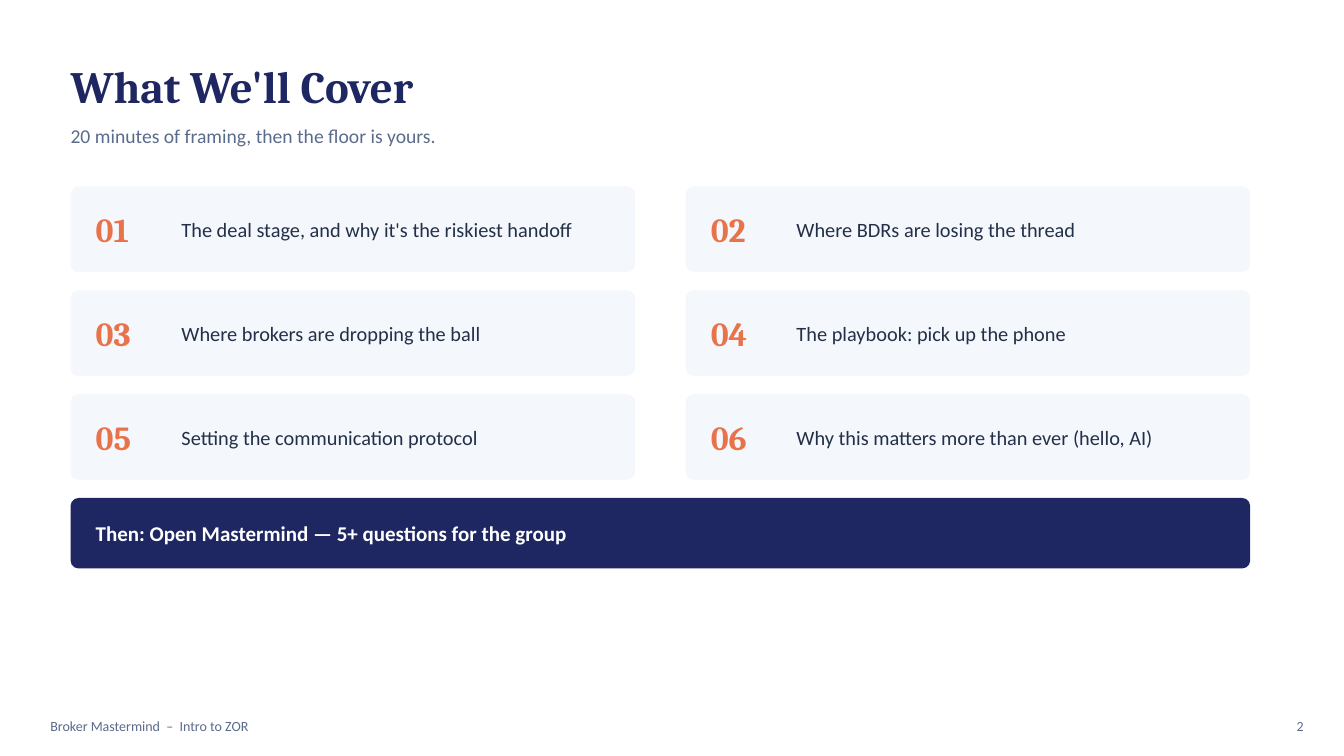
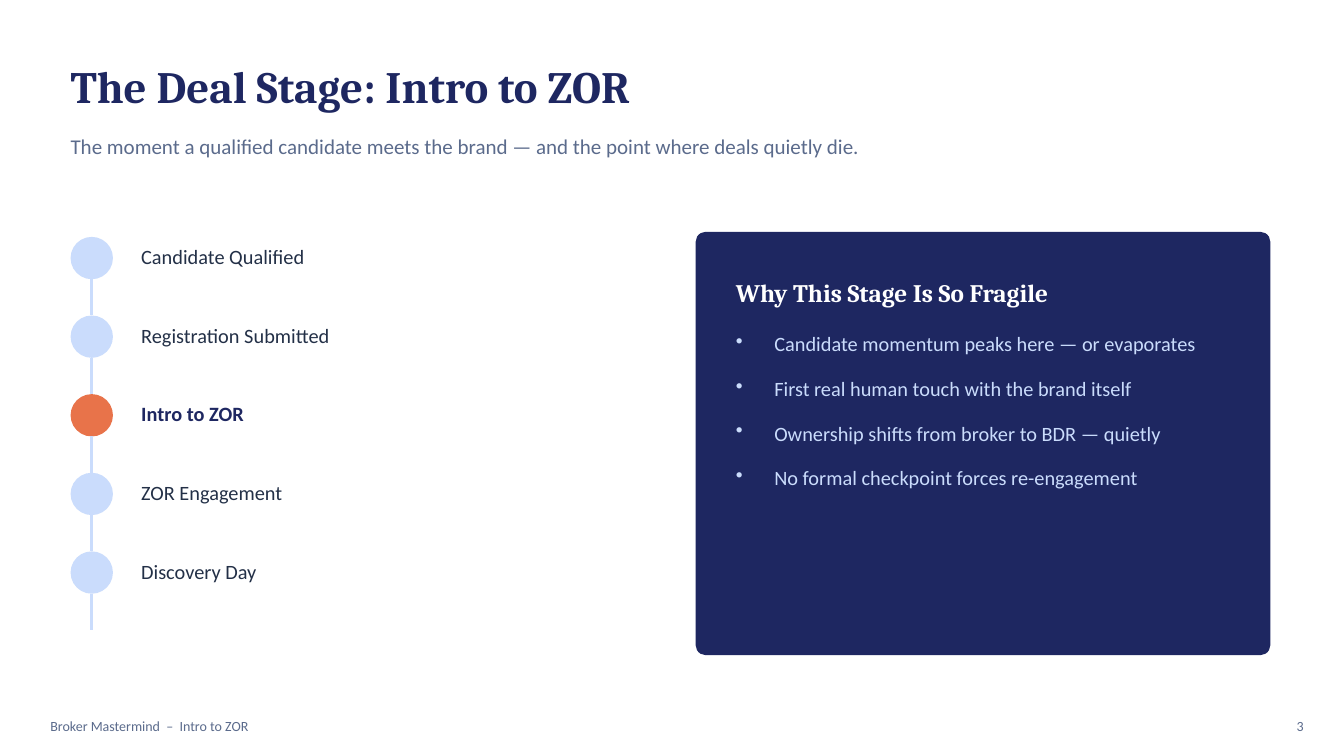
from dataclasses import dataclass
from typing import NamedTuple

import lxml.etree
import pptx
import pptx.dml.color
import pptx.enum.shapes
import pptx.enum.text
import pptx.oxml.ns
import pptx.presentation
import pptx.shapes.autoshape
import pptx.slide
import pptx.text.text
import pptx.util

SLIDE_WIDTH, SLIDE_HEIGHT = 13.33, 7.5
MARGIN = 0.7
COLORS = {
    "background": "FFFFFF",
    "navy": "1E2761",
    "coral": "E8734A",
    "ice": "CADCFC",
    "card": "F4F7FC",
    "body": "233047",
    "muted": "5B6B8C",
    "white": "FFFFFF",
}
FOOTER = "Broker Mastermind  –  Intro to ZOR"

Align = pptx.enum.text.PP_ALIGN
Anchor = pptx.enum.text.MSO_ANCHOR
Preset = pptx.enum.shapes.MSO_SHAPE


class Box(NamedTuple):
    left: float
    top: float
    width: float
    height: float

    def inches(self) -> list[int]:
        return [pptx.util.Inches(length) for length in self]


@dataclass(frozen=True)
class TextStyle:
    size: float
    color: str
    font: str = "Calibri"
    bold: bool = False


@dataclass(frozen=True)
class Stage:
    label: str
    current: bool = False


TITLE = TextStyle(32, "navy", "Cambria", True)
BODY = TextStyle(14.5, "body")
BODY_CURRENT = TextStyle(14.5, "navy", bold=True)
BODY_ON_NAVY = TextStyle(14.5, "ice")
CARD_NUMBER = TextStyle(24, "coral", "Cambria", True)
CLOSING = TextStyle(15, "white", bold=True)
PANEL_HEADING = TextStyle(18, "white", "Cambria", True)
SMALL = TextStyle(10, "muted")

TOPICS = [
    "The deal stage, and why it's the riskiest handoff",
    "Where BDRs are losing the thread",
    "Where brokers are dropping the ball",
    "The playbook: pick up the phone",
    "Setting the communication protocol",
    "Why this matters more than ever (hello, AI)",
]
STAGES = [
    Stage("Candidate Qualified"),
    Stage("Registration Submitted"),
    Stage("Intro to ZOR", current=True),
    Stage("ZOR Engagement"),
    Stage("Discovery Day"),
]
FRAGILE_REASONS = [
    "Candidate momentum peaks here — or evaporates",
    "First real human touch with the brand itself",
    "Ownership shifts from broker to BDR — quietly",
    "No formal checkpoint forces re-engagement",
]


def rgb(color: str) -> pptx.dml.color.RGBColor:
    return pptx.dml.color.RGBColor.from_string(COLORS[color])


def add_run(paragraph: pptx.text.text._Paragraph, text: str, style: TextStyle) -> None:
    run = paragraph.add_run()
    run.text = text
    run.font.name = style.font
    run.font.size = pptx.util.Pt(style.size)
    run.font.bold = style.bold
    run.font.color.rgb = rgb(style.color)


def add_frame(slide: pptx.slide.Slide, box: Box, anchor: Anchor) -> pptx.text.text.TextFrame:
    """Add a wrapping text box without insets."""
    frame = slide.shapes.add_textbox(*box.inches()).text_frame
    frame.word_wrap = True
    frame.vertical_anchor = anchor
    frame.margin_left = frame.margin_right = frame.margin_top = frame.margin_bottom = 0
    return frame


def add_label(slide: pptx.slide.Slide, box: Box, text: str, style: TextStyle,
              align: Align = Align.LEFT) -> None:
    paragraph = add_frame(slide, box, Anchor.MIDDLE).paragraphs[0]
    paragraph.alignment = align
    add_run(paragraph, text, style)


def add_filled(slide: pptx.slide.Slide, preset: Preset, box: Box,
               color: str) -> pptx.shapes.autoshape.Shape:
    shape = slide.shapes.add_shape(preset, *box.inches())
    shape.shadow.inherit = False
    shape.fill.solid()
    shape.fill.fore_color.rgb = rgb(color)
    shape.line.fill.background()
    return shape


def add_panel(slide: pptx.slide.Slide, box: Box, color: str, radius: float = 0.08) -> None:
    """Add a rounded panel whose corner radius is given in inches."""
    panel = add_filled(slide, Preset.ROUNDED_RECTANGLE, box, color)
    panel.adjustments[0] = radius / min(box.width, box.height)


def add_vertical_link(slide: pptx.slide.Slide, x: float, top: float, bottom: float) -> None:
    ends = [pptx.util.Inches(length) for length in (x, top, x, bottom)]
    link = slide.shapes.add_connector(pptx.enum.shapes.MSO_CONNECTOR.STRAIGHT, *ends)
    link.line.color.rgb = rgb("ice")
    link.line.width = pptx.util.Pt(2)
    lxml.etree.SubElement(link._element.spPr, pptx.oxml.ns.qn("a:effectLst"))


def add_bullets(slide: pptx.slide.Slide, box: Box, items: list[str], style: TextStyle) -> None:
    qn = pptx.oxml.ns.qn
    indent = pptx.util.Inches(0.38)
    frame = add_frame(slide, box, Anchor.TOP)
    for index, item in enumerate(items):
        paragraph = frame.add_paragraph() if index else frame.paragraphs[0]
        properties = paragraph._p.get_or_add_pPr()
        properties.set("marL", str(indent))
        properties.set("indent", str(-indent))
        bullet_color = lxml.etree.SubElement(properties, qn("a:buClr"))
        lxml.etree.SubElement(bullet_color, qn("a:srgbClr"), val=COLORS[style.color])
        lxml.etree.SubElement(properties, qn("a:buChar"), char="•")
        paragraph.line_spacing = 1.15
        if index:
            paragraph.space_before = pptx.util.Pt(12)
        add_run(paragraph, item, style)


def add_base_slide(deck: pptx.presentation.Presentation, number: int, title: str,
                   subtitle: str, subtitle_box: Box, subtitle_size: float) -> pptx.slide.Slide:
    """Add a blank slide with background, heading and footer."""
    slide = deck.slides.add_slide(deck.slide_layouts[6])
    slide.background.fill.solid()
    slide.background.fill.fore_color.rgb = rgb("background")
    add_label(slide, Box(MARGIN, 0.5, 11.5, 0.7), title, TITLE)
    add_label(slide, subtitle_box, subtitle, TextStyle(subtitle_size, "muted"))
    footer_top = SLIDE_HEIGHT - 0.45
    add_label(slide, Box(0.5, footer_top, 8, 0.3), FOOTER, SMALL)
    add_label(slide, Box(SLIDE_WIDTH - 1, footer_top, 0.6, 0.3), str(number), SMALL, Align.RIGHT)
    return slide


def build_agenda(deck: pptx.presentation.Presentation) -> None:
    slide = add_base_slide(deck, 2, "What We'll Cover",
                           "20 minutes of framing, then the floor is yours.",
                           Box(MARGIN, 1.15, 10, 0.4), 14)
    columns, grid_top, padding = 2, 1.85, 0.25
    card_width, card_height = 5.6, 0.85
    column_step, row_step = card_width + 0.5, card_height + 0.18
    for index, topic in enumerate(TOPICS):
        row, column = divmod(index, columns)
        left, top = MARGIN + column * column_step, grid_top + row * row_step
        add_panel(slide, Box(left, top, card_width, card_height), "card")
        add_label(slide, Box(left + padding, top, 0.8, card_height), f"{index + 1:02}", CARD_NUMBER)
        add_label(slide, Box(left + 1.1, top, 4.3, card_height), topic, BODY)

    closing_top = grid_top + len(TOPICS) // columns * row_step
    closing = Box(MARGIN, closing_top, column_step + card_width, 0.7)
    add_panel(slide, closing, "navy")
    add_label(slide, Box(MARGIN + padding, closing_top, closing.width - 2 * padding, closing.height),
              "Then: Open Mastermind — 5+ questions for the group", CLOSING)


def build_deal_stage(deck: pptx.presentation.Presentation) -> None:
    slide = add_base_slide(
        deck, 3, "The Deal Stage: Intro to ZOR",
        "The moment a qualified candidate meets the brand — and the point where deals quietly die.",
        Box(MARGIN, 1.2, 11, 0.5), 15)
    dot, step, timeline_top = 0.42, 0.78, 2.35
    for index, stage in enumerate(STAGES):
        top = timeline_top + index * step
        add_filled(slide, Preset.OVAL, Box(MARGIN, top, dot, dot),
                   "coral" if stage.current else "ice")
        add_vertical_link(slide, MARGIN + dot / 2, top + dot, top + step)
        add_label(slide, Box(MARGIN * 2, top - 0.08, 4.9, 0.55), stage.label,
                  BODY_CURRENT if stage.current else BODY)

    panel = Box(6.9, 2.3, 5.7, 4.2)
    text_left = panel.left + 0.4
    add_panel(slide, panel, "navy", radius=0.1)
    add_label(slide, Box(text_left, panel.top + 0.35, 4.9, 0.5),
              "Why This Stage Is So Fragile", PANEL_HEADING)
    add_bullets(slide, Box(text_left, panel.top + 0.95, 4.9, 2.9), FRAGILE_REASONS, BODY_ON_NAVY)


def main() -> None:
    deck = pptx.Presentation()
    deck.slide_width = pptx.util.Inches(SLIDE_WIDTH)
    deck.slide_height = pptx.util.Inches(SLIDE_HEIGHT)
    build_agenda(deck)
    build_deal_stage(deck)
    deck.save("out.pptx")


if __name__ == "__main__":
    main()
